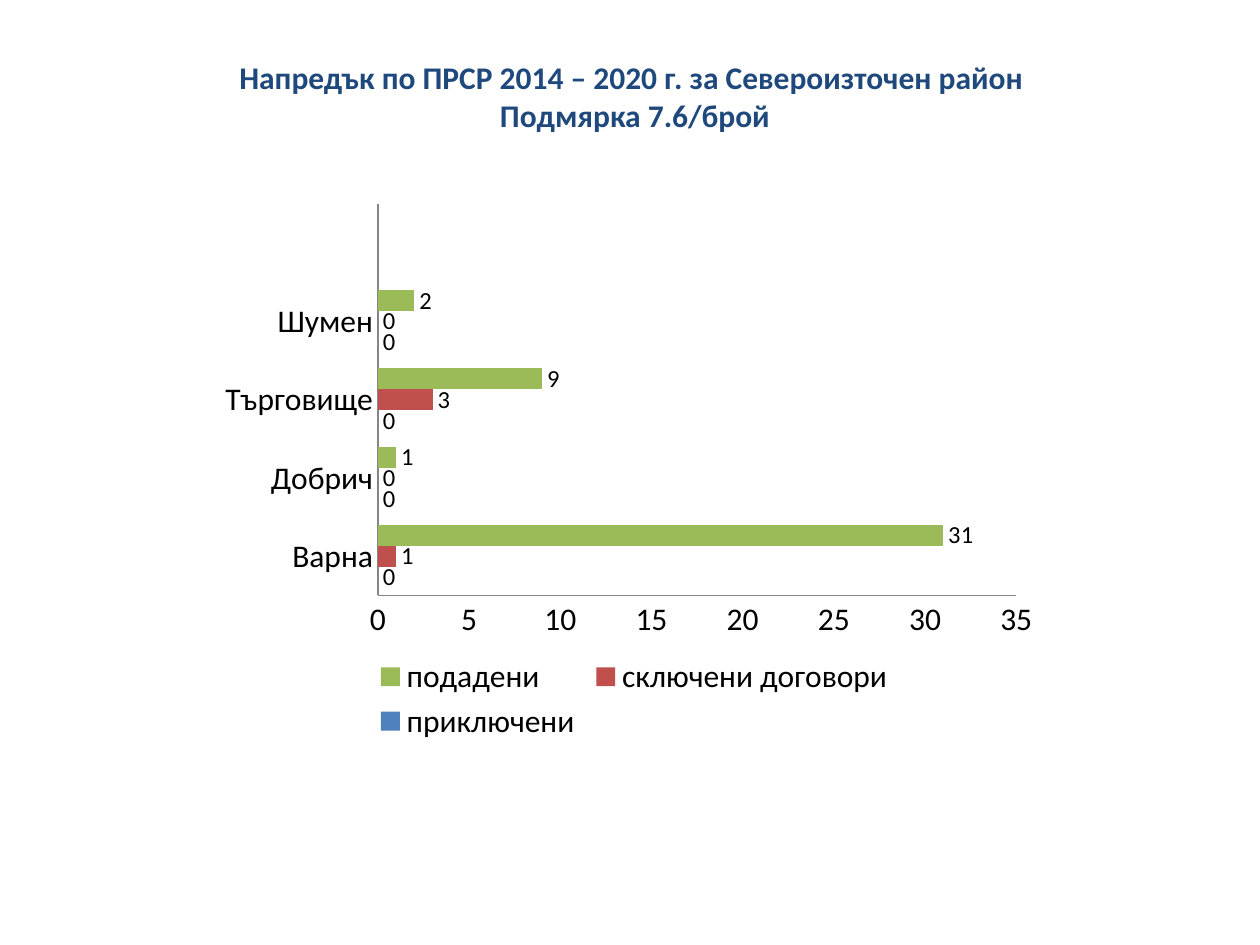
from lxml import etree
from pptx import Presentation
from pptx.chart.data import CategoryChartData
from pptx.dml.color import RGBColor
from pptx.enum.chart import (XL_CHART_TYPE, XL_LABEL_POSITION,
                             XL_LEGEND_POSITION, XL_TICK_MARK)
from pptx.enum.text import MSO_AUTO_SIZE, PP_ALIGN
from pptx.oxml.ns import qn
from pptx.util import Inches, Pt

BAR_CLUSTERED = XL_CHART_TYPE.BAR_CLUSTERED
OUTSIDE_END = XL_LABEL_POSITION.OUTSIDE_END
LEGEND_BOTTOM = XL_LEGEND_POSITION.BOTTOM
NO_TICK = XL_TICK_MARK.NONE
FIT_SHAPE = MSO_AUTO_SIZE.SHAPE_TO_FIT_TEXT
CENTER = PP_ALIGN.CENTER

COLORS = {"title": "1F497D", "text": "000000", "axis": "868686",
          "completed": "4F81BD", "contracted": "C0504D", "submitted": "9BBB59"}

TITLE_LINES = ["Напредък по ПРСР 2014 – 2020 г. за Североизточен район ",
               "Подмярка 7.6/брой"]
# The last category is an empty slot above the districts.
DISTRICTS = ["Варна", "Добрич", "Търговище", "Шумен", ""]
SERIES = [("приключени", "completed", [0, 0, 0, 0, None]),
          ("сключени договори", "contracted", [1, 0, 3, 0, None]),
          ("подадени", "submitted", [31, 1, 9, 2, None])]


def set_layout(element, successor_tags, shares, inner=False):
    """Fix a chart part at left, top, width, height as shares of the chart."""
    for old_layout in element.findall(qn("c:layout")):
        element.remove(old_layout)
    layout = etree.Element(qn("c:layout"))
    manual = etree.SubElement(layout, qn("c:manualLayout"))
    settings = [("layoutTarget", "inner")] if inner else []
    settings += [("xMode", "edge"), ("yMode", "edge")]
    settings += zip("xywh", shares)
    for tag, value in settings:
        etree.SubElement(manual, qn(f"c:{tag}")).set("val", str(value))
    successor = next(child for child in element
                     if child.tag in [qn(tag) for tag in successor_tags])
    successor.addprevious(layout)


class SlideBuilder:
    font_name = "Calibri"
    text_size = 18
    label_size = 14

    def __init__(self, presentation):
        self.width = presentation.slide_width
        self.height = presentation.slide_height
        self.slide = presentation.slides.add_slide(presentation.slide_layouts[6])

    def place(self, left, top, width, height):
        """Turn shares of the slide's size into lengths."""
        return (round(left * self.width), round(top * self.height),
                round(width * self.width), round(height * self.height))

    def style_font(self, font, size, color, bold=False):
        font.name = self.font_name
        font.size = Pt(size)
        font.bold = bold
        font.color.rgb = RGBColor.from_string(COLORS[color])

    def add_title(self, lines, *shares):
        text_frame = self.slide.shapes.add_textbox(*self.place(*shares)).text_frame
        text_frame.word_wrap = True
        text_frame.auto_size = FIT_SHAPE
        text_frame.text = "\n".join(lines)
        for paragraph in text_frame.paragraphs:
            paragraph.alignment = CENTER
            for run in paragraph.runs:
                self.style_font(run.font, self.text_size, "title", bold=True)

    def add_bar_chart(self, categories, series_rows, *shares):
        data = CategoryChartData()
        data.categories = categories
        for name, _, values in series_rows:
            data.add_series(name, values)
        chart = self.slide.shapes.add_chart(
            BAR_CLUSTERED, *self.place(*shares), data).chart
        chart.has_title = False
        self.style_font(chart.font, self.text_size, "text")
        self.style_bars(chart.plots[0], series_rows)
        for axis in (chart.category_axis, chart.value_axis):
            axis.has_major_gridlines = False
            axis.major_tick_mark = axis.minor_tick_mark = NO_TICK
            axis.format.line.width = Pt(0.75)
            axis.format.line.color.rgb = RGBColor.from_string(COLORS["axis"])
        chart.value_axis.minimum_scale = 0
        chart.value_axis.maximum_scale = 35
        chart.value_axis.major_unit = 5
        chart.has_legend = True
        chart.legend.position = LEGEND_BOTTOM
        chart.legend.include_in_layout = False
        return chart

    def style_bars(self, plot, series_rows):
        plot.gap_width = 75
        plot.vary_by_categories = False
        for series, (_, color, _) in zip(plot.series, series_rows):
            series.format.fill.solid()
            series.format.fill.fore_color.rgb = RGBColor.from_string(COLORS[color])
            labels = series.data_labels
            labels.show_value = True
            labels.position = OUTSIDE_END
            self.style_font(labels.font, self.label_size, "text")


def main():
    presentation = Presentation()
    presentation.slide_width = Inches(10)
    presentation.slide_height = Inches(7.5)
    builder = SlideBuilder(presentation)
    chart = builder.add_bar_chart(DISTRICTS, SERIES, 1 / 6, 0.204, 2 / 3, 0.592)
    plot_area = chart.plots[0].series[0].format and chart.element.find(
        ".//" + qn("c:plotArea"))
    set_layout(plot_area, ["c:barChart"], (0.2, 0.02, 0.76, 0.7), inner=True)
    legend = chart.element.find(".//" + qn("c:legend"))
    set_layout(legend, ["c:overlay"], (0.19, 0.82, 0.63, 0.17))
    builder.add_title(TITLE_LINES, 0.054, 0.055, 0.9, 0.095)
    presentation.save("out.pptx")


if __name__ == "__main__":
    main()
